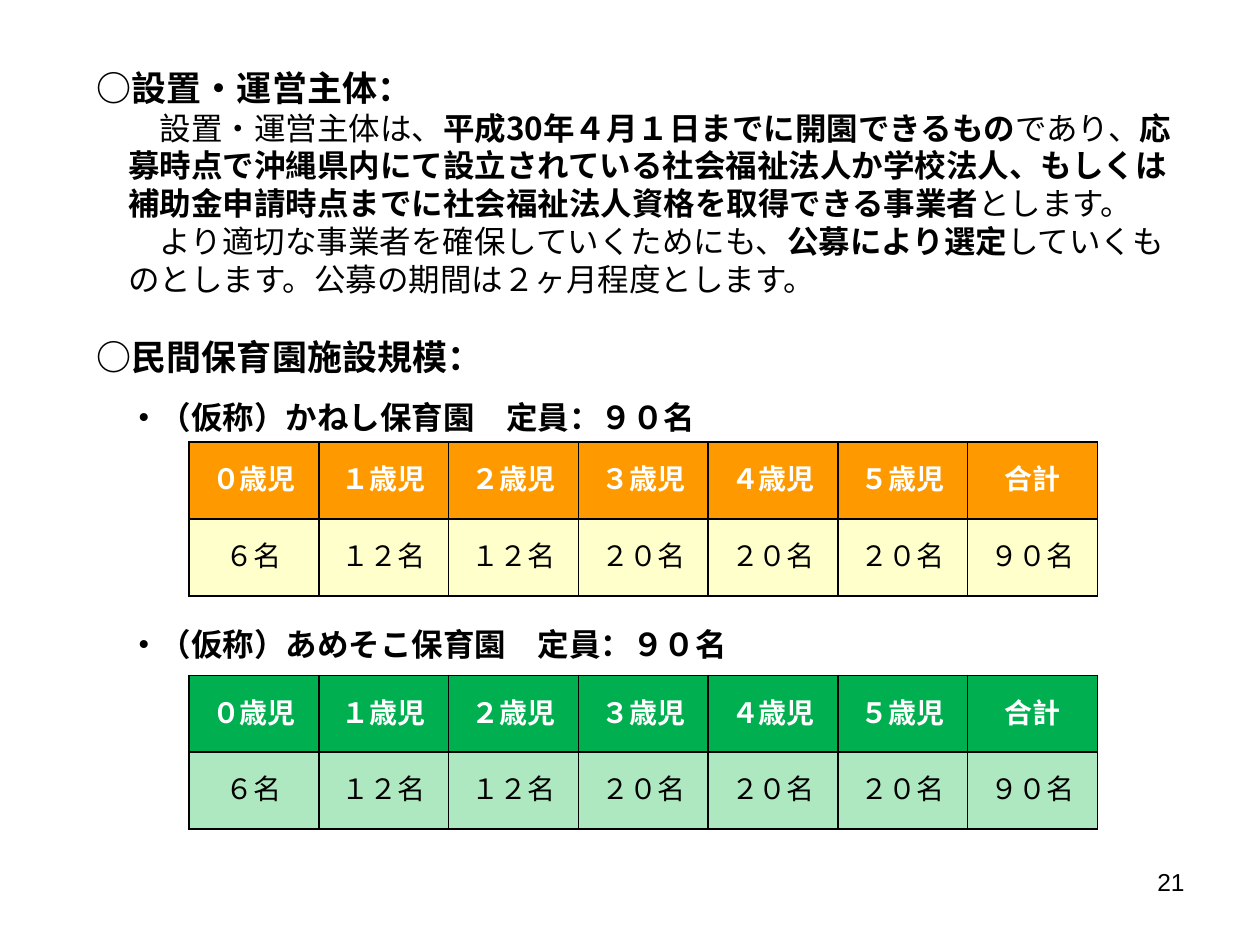
from dataclasses import dataclass

from lxml.etree import SubElement
from pptx import Presentation
from pptx.dml.color import RGBColor
from pptx.enum.text import MSO_ANCHOR as Anchor, PP_ALIGN as Align
from pptx.oxml.ns import qn
from pptx.util import Inches, Pt

BLACK = RGBColor(0x00, 0x00, 0x00)
WHITE = RGBColor(0xFF, 0xFF, 0xFF)
ORANGE = RGBColor(0xFF, 0x99, 0x00)
CREAM = RGBColor(0xFF, 0xFF, 0xCC)
GREEN = RGBColor(0x00, 0xB0, 0x50)
MINT = RGBColor(0xAE, 0xE8, 0xC0)

JAPANESE = "Noto Sans CJK JP"
ACCENT = "Karla"
LINE_FACTOR = 1.2
COLUMN_WIDTH = 1.03
ROW_HEIGHT = 0.61

AGES = ["０歳児", "１歳児", "２歳児", "３歳児", "４歳児", "５歳児", "合計"]
PLACES = ["６名", "１２名", "１２名", "２０名", "２０名", "２０名", "９０名"]


@dataclass
class Span:
    text: str
    bold: bool = False
    font: str = JAPANESE


@dataclass
class Block:
    spans: list[Span]
    size: int = 18
    space_before: float = 0
    margin: int = 0
    indent: int = 0


@dataclass
class CapacityTable:
    top: float
    header_fill: RGBColor
    body_fill: RGBColor


BLOCKS = [
    Block([Span("○", True), Span("設置・運営主体", True, ACCENT), Span("：", True)], size=20),
    Block([
        Span("設置・運営主体は、"),
        Span("平成30年４月１日までに開園できるもの", True),
        Span("であり、"),
        Span("応募時点で沖縄県内にて設立されている社会福祉法人か学校法人、もしくは"
             "補助金申請時点までに社会福祉法人資格を取得できる事業者", True),
        Span("とします。"),
    ], margin=18, indent=18),
    Block([
        Span("より適切な事業者を確保していくためにも、"),
        Span("公募により選定", True),
        Span("していくものとします。公募の期間は２ヶ月程度とします。"),
    ], margin=18, indent=18),
    Block([Span("○民間保育園施設規模：", True)], size=20, space_before=21.6),
    Block([Span("・（仮称）かねし保育園　定員：９０名", True)], space_before=12, margin=18),
    Block([Span("・（仮称）あめそこ保育園　定員：９０名", True)], space_before=108, margin=18),
]

TABLES = [
    CapacityTable(3.51, ORANGE, CREAM),
    CapacityTable(5.36, GREEN, MINT),
]


def format_run(run, size: int, name: str, color: RGBColor = BLACK, bold: bool = False) -> None:
    run.font.size = Pt(size)
    run.font.name = name
    run.font.bold = bold
    run.font.color.rgb = color
    SubElement(run.font._element, qn("a:ea"), typeface=name)


def write_block(paragraph, block: Block) -> None:
    paragraph.line_spacing = Pt(block.size * LINE_FACTOR)
    paragraph.space_before = Pt(block.space_before)
    properties = paragraph._p.get_or_add_pPr()
    properties.set("marL", str(Pt(block.margin)))
    properties.set("indent", str(Pt(block.indent)))
    for span in block.spans:
        run = paragraph.add_run()
        run.text = span.text
        format_run(run, block.size, span.font, bold=span.bold)


def add_body(slide) -> None:
    box = slide.shapes.add_textbox(Inches(0.67), Inches(0.48), Inches(8.86), Inches(6.4))
    frame = box.text_frame
    frame.word_wrap = True
    for index, block in enumerate(BLOCKS):
        write_block(frame.add_paragraph() if index else frame.paragraphs[0], block)


def add_borders(cell) -> None:
    properties = cell._tc.get_or_add_tcPr()
    for side in ("lnL", "lnR", "lnT", "lnB"):
        line = SubElement(properties, qn(f"a:{side}"), w=str(Pt(1)))
        fill = SubElement(line, qn("a:solidFill"))
        SubElement(fill, qn("a:srgbClr"), val=str(BLACK))


def format_cell(cell, text: str, fill: RGBColor, color: RGBColor, bold: bool) -> None:
    cell.text_frame.text = text
    cell.vertical_anchor = Anchor.MIDDLE
    paragraph = cell.text_frame.paragraphs[0]
    paragraph.alignment = Align.CENTER
    format_run(paragraph.runs[0], 16, ACCENT, color, bold)
    add_borders(cell)
    cell.fill.solid()
    cell.fill.fore_color.rgb = fill


def add_capacity_table(slide, capacity: CapacityTable) -> None:
    table = slide.shapes.add_table(
        2, len(AGES), Inches(1.5), Inches(capacity.top),
        Inches(COLUMN_WIDTH * len(AGES)), Inches(ROW_HEIGHT * 2),
    ).table
    for column, (age, places) in enumerate(zip(AGES, PLACES)):
        format_cell(table.cell(0, column), age, capacity.header_fill, WHITE, True)
        format_cell(table.cell(1, column), places, capacity.body_fill, BLACK, False)


def add_page_number(slide) -> None:
    box = slide.shapes.add_textbox(Inches(7.17), Inches(6.83), Inches(2.33), Inches(0.52))
    box.text_frame.word_wrap = True
    box.text_frame.text = "21"
    paragraph = box.text_frame.paragraphs[0]
    paragraph.alignment = Align.RIGHT
    format_run(paragraph.runs[0], 14, "Arial")


def main() -> None:
    presentation = Presentation()
    presentation.slide_width = Inches(10)
    presentation.slide_height = Inches(7.5)
    slide = presentation.slides.add_slide(presentation.slide_layouts[6])
    add_page_number(slide)
    add_body(slide)
    for capacity in TABLES:
        add_capacity_table(slide, capacity)
    presentation.save("out.pptx")


if __name__ == "__main__":
    main()
